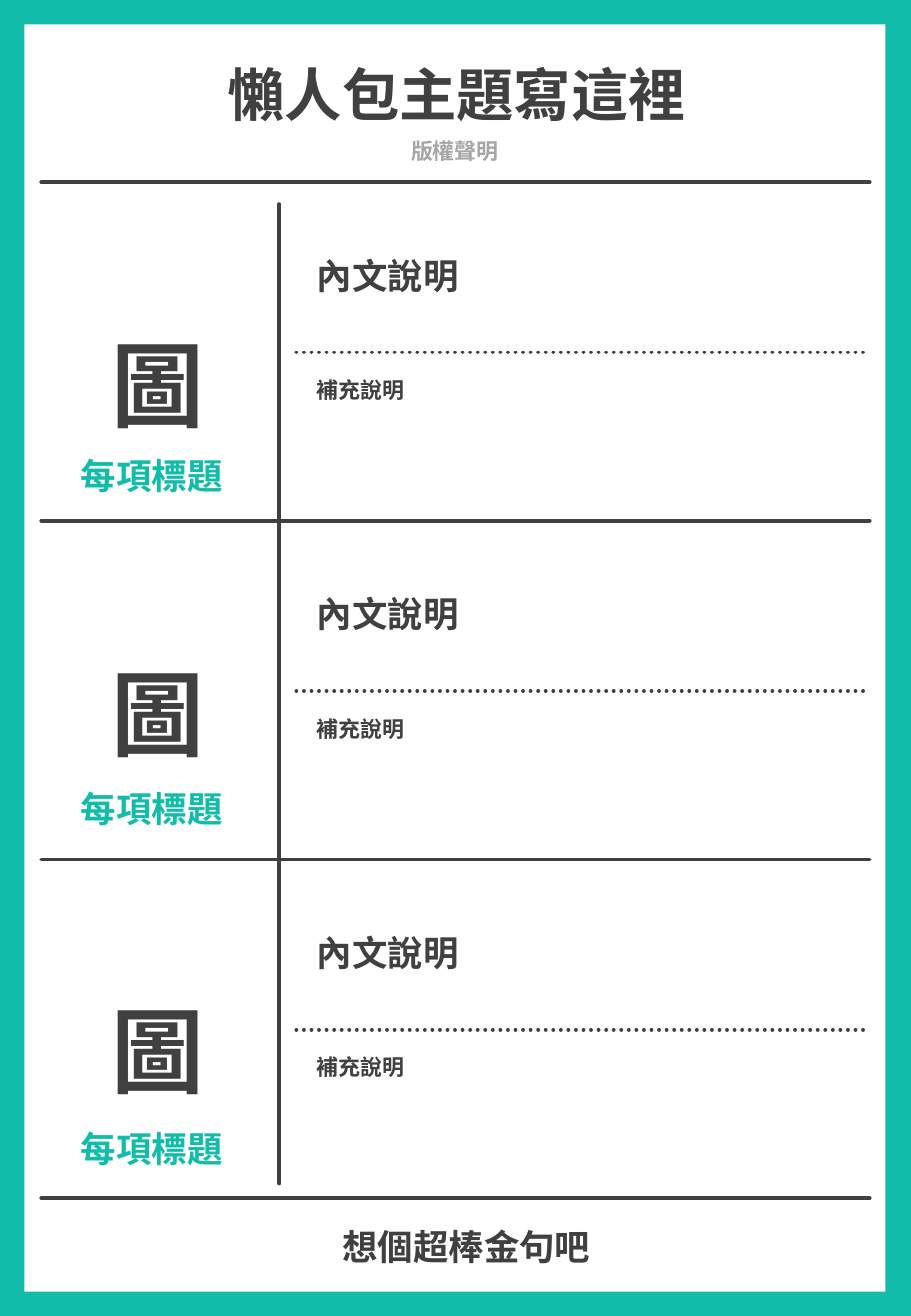
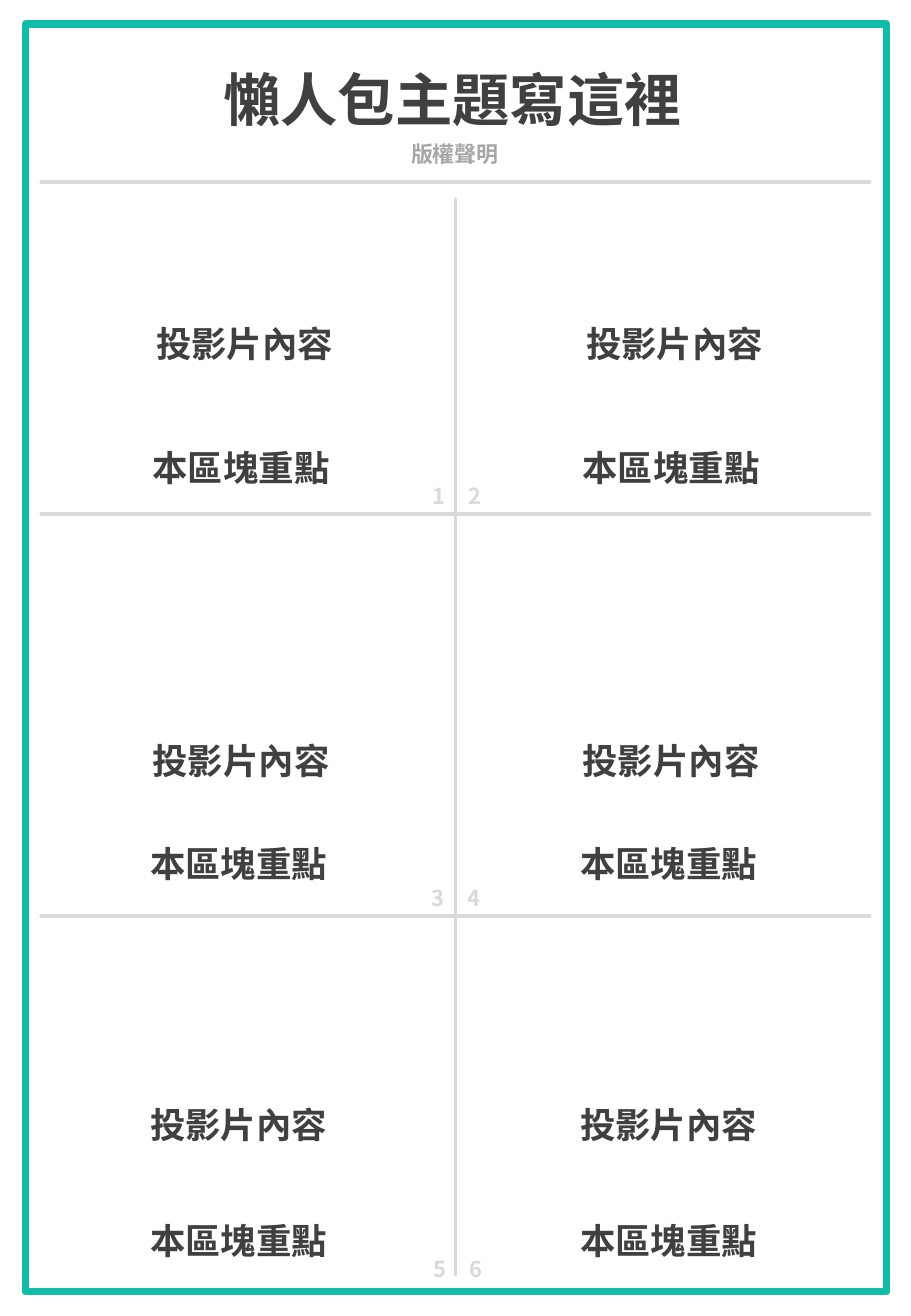
from dataclasses import dataclass

from lxml.etree import SubElement
from pptx import Presentation
from pptx.dml.color import RGBColor
from pptx.enum.dml import MSO_LINE
from pptx.enum.shapes import MSO_CONNECTOR, MSO_SHAPE
from pptx.enum.text import MSO_ANCHOR, MSO_AUTO_SIZE, PP_ALIGN
from pptx.oxml.ns import qn
from pptx.util import Inches, Pt


@dataclass(frozen=True)
class Theme:
    font: str = "Noto Sans CJK SC"
    accent: str = "11BDA9"
    ink: str = "404040"
    muted: str = "A6A6A6"
    pale: str = "D9D9D9"
    paper: str = "FFFFFF"
    title: int = 34
    heading: int = 21
    small: int = 13
    icon: int = 55
    rule: float = 2.25
    frame: float = 4.5


T = Theme()
WIDTH, HEIGHT = 7.5, 10.83
LEFT, RIGHT = 0.34, 7.16
HEADER_BOTTOM, FOOTER_TOP = 1.5, 9.86
LINE_HEIGHT = {T.title: 0.67, T.heading: 0.45, T.small: 0.32, T.icon: 1.37}
CENTER = PP_ALIGN.CENTER

# Topic rows: tops of the picture mark and its label, from the row's top
TOPIC_ROWS = [(0.69, 2.19), (0.61, 2.14), (0.6, 2.15)]

# Panel rows: bottom of the row, then (left, top) of content, key point, number
PANEL_ROWS = [
    (4.23, (1.18, 2.6), (1.15, 3.62), (3.46, 3.92)),
    (7.54, (1.15, 6.03), (1.13, 6.88), (3.45, 7.23)),
    (None, (1.13, 9.03), (1.13, 9.98), (3.47, 10.28)),
]
PANEL_STEP, NUMBER_STEP = 3.54, 0.3


def rgb(color):
    return RGBColor.from_string(color)


def set_all(obj, values):
    for name, value in values.items():
        setattr(obj, name, value)


def place(sp, left, top, width, height):
    set_all(sp, {"left": Inches(left), "top": Inches(top),
                 "width": Inches(width), "height": Inches(height)})


def write(sp, text, size, color=T.ink, align=PP_ALIGN.LEFT, wrap=False, spacing=None):
    tf = sp.text_frame
    set_all(tf, {"word_wrap": wrap, "auto_size": MSO_AUTO_SIZE.SHAPE_TO_FIT_TEXT,
                 "vertical_anchor": MSO_ANCHOR.TOP})
    p = tf.paragraphs[0]
    set_all(p, {"alignment": align, "line_spacing": spacing})
    r = p.add_run()
    r.text = text
    set_all(r.font, {"name": T.font, "size": Pt(size), "bold": True})
    r.font.color.rgb = rgb(color)
    SubElement(r.font._element, qn("a:ea"), typeface=T.font)


def add_text(s, left, top, width, text, size, **style):
    sp = s.shapes.add_textbox(0, 0, 0, 0)
    place(sp, left, top, width, LINE_HEIGHT[size])
    write(sp, text, size, **style)


def add_rule(s, x1, y1, x2, y2, color=T.ink, dash=None):
    cn = s.shapes.add_connector(MSO_CONNECTOR.STRAIGHT, *map(Inches, (x1, y1, x2, y2)))
    set_all(cn.line, {"width": Pt(T.rule), "dash_style": dash})
    cn.line.color.rgb = rgb(color)
    props = cn._element.spPr
    props.find(qn("a:ln")).set("cap", "rnd")
    SubElement(props, qn("a:effectLst"))


def add_panel(s, left):
    """Add the page rectangle behind everything else."""
    sp = s.shapes.add_shape(MSO_SHAPE.RECTANGLE, 0, 0, 0, 0)
    place(sp, left, 0.2, 7.09, 10.43)
    sp.shadow.inherit = False
    s.shapes._spTree.insert(2, sp._element)
    return sp


def add_page(prs, background, title_box, notice_top):
    """Add a slide with the shared title and copyright line."""
    s = prs.slides.add_slide(prs.slide_layouts[5])
    s.background.fill.solid()
    s.background.fill.fore_color.rgb = rgb(background)
    place(s.shapes.title, *title_box, LINE_HEIGHT[T.title])
    write(s.shapes.title, "懶人包主題寫這裡", T.title, align=CENTER, wrap=True)
    add_text(s, 3.28, notice_top, 0.93, "版權聲明", T.small, color=T.muted, align=CENTER)
    return s


def topic_slide(prs):
    s = add_page(prs, T.accent, (1.04, 0.44, 5.44), 1.08)
    sp = add_panel(s, 0.2)
    sp.fill.solid()
    sp.fill.fore_color.rgb = rgb(T.paper)
    sp.line.fill.background()

    pitch = (FOOTER_TOP - HEADER_BOTTOM) / len(TOPIC_ROWS)
    for i in range(len(TOPIC_ROWS) + 1):
        y = HEADER_BOTTOM + i * pitch
        add_rule(s, LEFT, y, RIGHT, y)
    add_rule(s, 2.3, 1.68, 2.3, 9.74)

    for i, (icon, label) in enumerate(TOPIC_ROWS):
        y = HEADER_BOTTOM + i * pitch
        add_text(s, 0.82, y + icon, 0.97, "圖", T.icon, spacing=1.5)
        add_text(s, 0.56, y + label, 1.38, "每項標題", T.heading, color=T.accent, align=CENTER)
        add_text(s, 2.51, y + 0.54, 1.38, "內文說明", T.heading)
        add_rule(s, 2.44, y + 1.4, 7.15, y + 1.4, dash=MSO_LINE.ROUND_DOT)
        add_text(s, 2.51, y + 1.55, 4.57, "補充說明", T.small, wrap=True)
    add_text(s, 2.72, 10.03, 2.26, "想個超棒金句吧", T.heading)


def panel_slide(prs):
    s = add_page(prs, T.paper, (1.34, 0.48, 4.77), 1.11)
    sp = add_panel(s, 0.21)
    sp.fill.background()
    sp.line.color.rgb = rgb(T.accent)
    sp.line.width = Pt(T.frame)

    for y in [HEADER_BOTTOM] + [row[0] for row in PANEL_ROWS if row[0]]:
        add_rule(s, LEFT, y, RIGHT, y, T.pale)
    add_rule(s, WIDTH / 2, 1.64, WIDTH / 2, 10.49, T.pale)

    for i, (_, content, key, number) in enumerate(PANEL_ROWS):
        for col in range(2):
            for (x, y), text in ((content, "投影片內容"), (key, "本區塊重點")):
                add_text(s, x + col * PANEL_STEP, y, 1.67, text, T.heading, align=CENTER)
            add_text(s, number[0] + col * NUMBER_STEP, number[1], 0.31,
                     str(2 * i + col + 1), T.small, color=T.pale)


def main():
    prs = Presentation()
    set_all(prs, {"slide_width": Inches(WIDTH), "slide_height": Inches(HEIGHT)})
    topic_slide(prs)
    panel_slide(prs)
    prs.save("out.pptx")


if __name__ == "__main__":
    main()
